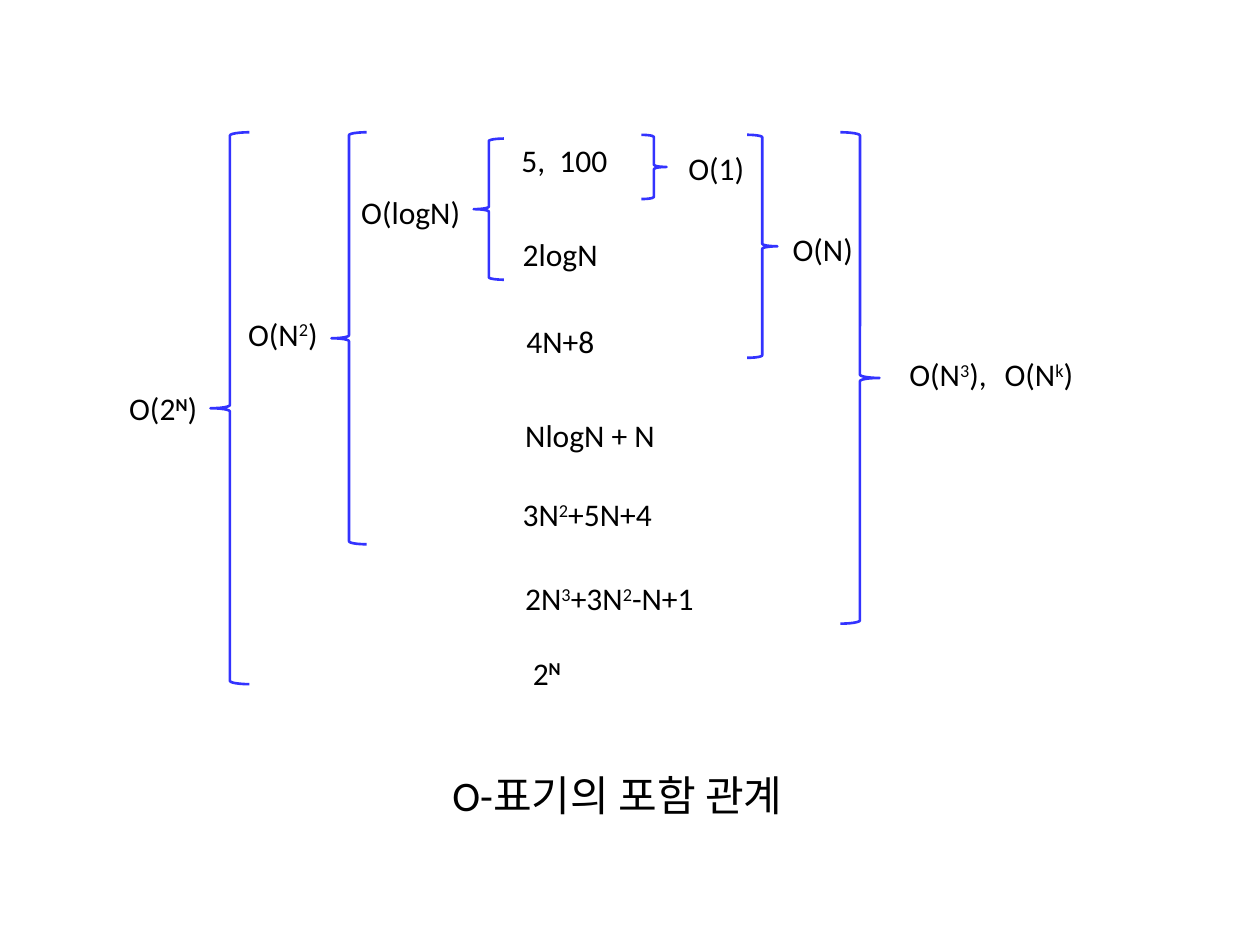
"""Build a slide on how the classes of O-notation contain one another."""
from pptx import Presentation
from pptx.dml.color import RGBColor
from pptx.enum.shapes import MSO_SHAPE
from pptx.enum.text import MSO_ANCHOR, MSO_AUTO_SIZE, PP_ALIGN
from pptx.util import Inches, Pt

LEFT, MID = PP_ALIGN.LEFT, PP_ALIGN.CENTER
OPEN, SHUT = MSO_SHAPE.LEFT_BRACE, MSO_SHAPE.RIGHT_BRACE
TOP, GROW = MSO_ANCHOR.TOP, MSO_AUTO_SIZE.SHAPE_TO_FIT_TEXT
COLORS = {"text": "000000", "brace": "3333FF"}
FONT = "Calibri"
HIGH = 0.4

TITLE = ("O-표기의 포함 관계", (3.49, 6.06, 3.03, 0.5))
# A caret raises the character that follows it.
TERMS = [
    ("5,  100", 4.04, 1.07, 1.42),
    ("2logN", 4.05, 1.82, 1.42),
    ("4N+8", 4.08, 2.51, 1.42),
    ("NlogN + N", 4.07, 3.25, 1.42),
    ("3N^2+5N+4", 4.05, 3.88, 2.57),
    ("2N^3+3N^2-N+1", 4.07, 4.55, 1.96),
    ("2^N", 4.13, 5.14, 1.81),
]
ORDERS = [
    ("O(1)", 5.27, 1.13, 0.83),
    ("O(logN)", 2.63, 1.48, 1.26),
    ("O(N)", 6.15, 1.78, 0.76),
    ("O(N^2)", 1.85, 2.45, 0.79),
    ("O(N^3),", 7.06, 2.77, 0.93),
    ("O(N^k)", 7.82, 2.77, 0.85),
    ("O(2^N)", 0.82, 3.04, 0.95),
]
BRACES = [
    (SHUT, 5.09, 1.07, 0.2, 0.51),
    (OPEN, 3.76, 1.1, 0.24, 1.12),
    (SHUT, 5.93, 1.07, 0.24, 1.77),
    (OPEN, 2.63, 1.05, 0.28, 3.27),
    (SHUT, 6.67, 1.05, 0.31, 3.9),
    (OPEN, 1.67, 1.05, 0.31, 4.38),
]


def color(name):
    return RGBColor.from_string(COLORS[name])


def put(item, formats):
    for name, value in formats.items():
        setattr(item, name, value)


def split(text):
    head, *rest = text.split("^")
    yield head, False
    for part in rest:
        yield part[0], True
        if part[1:]:
            yield part[1:], False


def write(shape, text, align, size=18, wrap=True):
    frame = shape.text_frame
    put(frame, {"word_wrap": wrap, "auto_size": GROW,
                "vertical_anchor": TOP})
    para = frame.paragraphs[0]
    para.alignment = align
    for part, raised in split(text):
        run = para.add_run()
        run.text = part
        put(run.font, {"name": FONT, "size": Pt(size),
                       "bold": raised and part == "N"})
        run.font.color.rgb = color("text")
        if raised:
            run._r.get_or_add_rPr().set("baseline", "30000")


def add_brace(slide, kind, *box):
    brace = slide.shapes.add_shape(kind, *map(Inches, box))
    brace.shadow.inherit = False
    brace.fill.background()
    brace.line.color.rgb = color("brace")
    brace.line.width = Pt(1.5)


def main():
    deck = Presentation()
    put(deck, {"slide_width": Inches(10), "slide_height": Inches(7.5)})
    slide = deck.slides.add_slide(deck.slide_layouts[5])

    text, box = TITLE
    title = slide.shapes.title
    put(title, dict(zip(("left", "top", "width", "height"),
                        map(Inches, box))))
    write(title, text, LEFT, 24, False)

    for brace in BRACES:
        add_brace(slide, *brace)
    for group, align in ((TERMS, LEFT), (ORDERS, MID)):
        for text, *box in group:
            label = slide.shapes.add_textbox(*map(Inches, (*box, HIGH)))
            write(label, text, align)
    deck.save("out.pptx")


if __name__ == "__main__":
    main()
